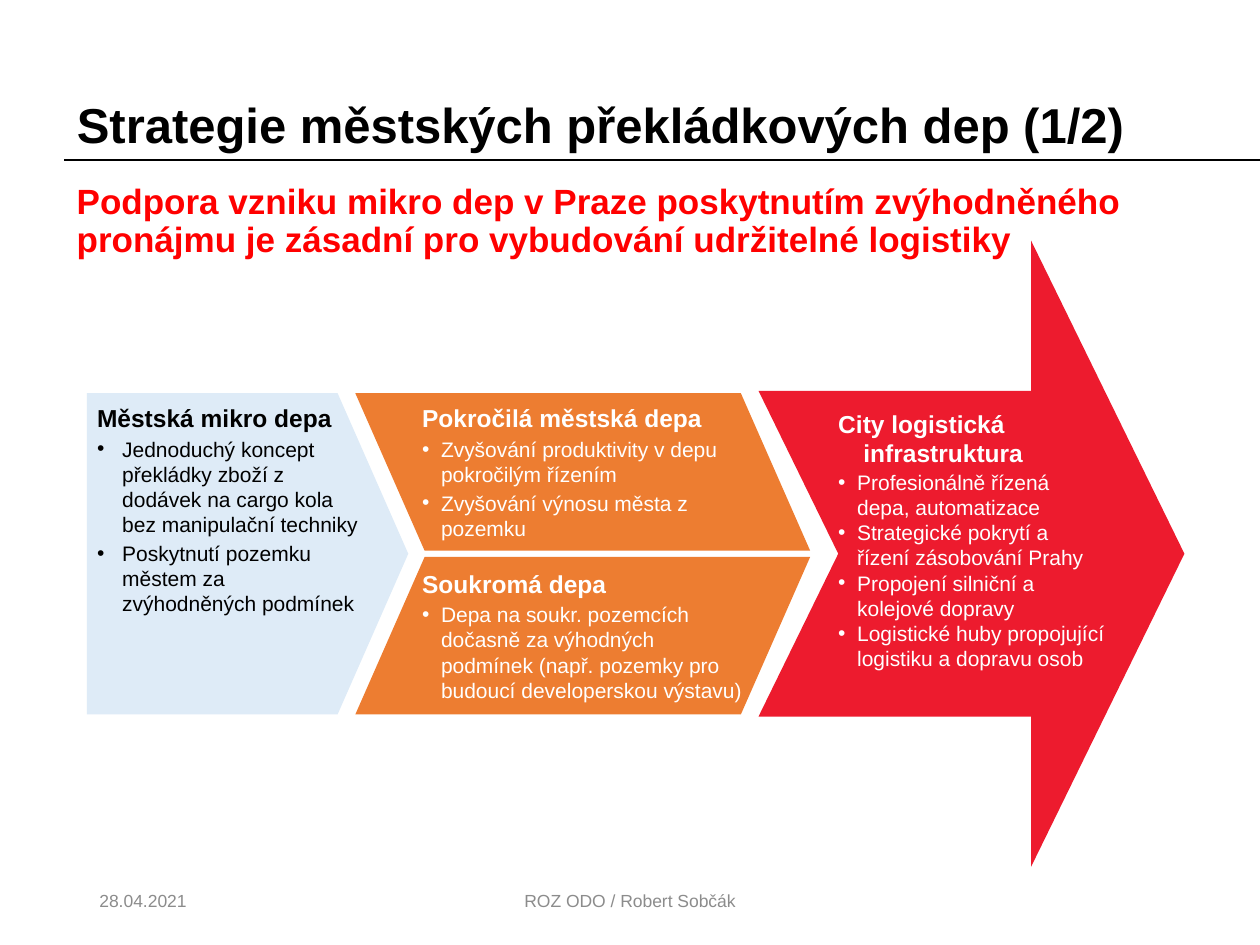
from lxml import etree
from pptx import Presentation
from pptx.dml.color import RGBColor
from pptx.enum.shapes import MSO_CONNECTOR, MSO_SHAPE
from pptx.enum.text import MSO_ANCHOR, MSO_AUTO_SIZE, PP_ALIGN
from pptx.oxml.ns import qn
from pptx.util import Inches, Pt

LEFT, CENTER = PP_ALIGN.LEFT, PP_ALIGN.CENTER
TOP, MIDDLE, BOTTOM = MSO_ANCHOR.TOP, MSO_ANCHOR.MIDDLE, MSO_ANCHOR.BOTTOM
PENTAGON, SLANT = MSO_SHAPE.PENTAGON, MSO_SHAPE.PARALLELOGRAM
NOTCHED_ARROW = MSO_SHAPE.NOTCHED_RIGHT_ARROW
STRAIGHT = MSO_CONNECTOR.STRAIGHT
NO_AUTOFIT = MSO_AUTO_SIZE.NONE

COLORS = {
    "black": "000000",
    "white": "FFFFFF",
    "gray": "8C8C8C",
    "claim": "FF0000",
    "micro": "DEEBF7",
    "depot": "ED7D31",
    "city": "ED1B2E",
}


class SlideBuilder:
    font = "Arial"

    def __init__(self, deck):
        self.page = deck.slides.add_slide(deck.slide_layouts[5])

    def color(self, name):
        return RGBColor.from_string(COLORS[name])

    def add_span(self, para, text, size, color, bold=False, align=LEFT):
        para.alignment = align
        span = para.add_run()
        span.text = text
        span.font.name = self.font
        span.font.size = Pt(size)
        span.font.bold = bold
        span.font.color.rgb = self.color(color)

    def indent(self, para, width, bullet_color=None):
        props = para._p.get_or_add_pPr()
        props.set("marL", str(Inches(width)))
        props.set("indent", str(-Inches(width)))
        if bullet_color:
            tint = etree.SubElement(props, qn("a:buClr"))
            etree.SubElement(tint, qn("a:srgbClr"), val=COLORS[bullet_color])
            etree.SubElement(props, qn("a:buFont"), typeface=self.font)
            etree.SubElement(props, qn("a:buChar"), char="•")

    def title(self, text, left, top, width, height):
        box = self.page.shapes.title
        box.left, box.top = Inches(left), Inches(top)
        box.width, box.height = Inches(width), Inches(height)
        frame = box.text_frame
        frame.auto_size = NO_AUTOFIT
        frame.vertical_anchor = BOTTOM
        frame.paragraphs[0].line_spacing = 0.9
        self.add_span(frame.paragraphs[0], text, 28, "black", bold=True)

    def rule(self, left, right, top):
        line = self.page.shapes.add_connector(
            STRAIGHT, Inches(left), Inches(top), Inches(right), Inches(top))
        line.line.color.rgb = self.color("black")
        line.line.width = Pt(1)
        etree.SubElement(line._element.spPr, qn("a:effectLst"))

    def text(self, text, left, top, width, height, size, color,
             bold=False, align=LEFT, anchor=MIDDLE, spacing=None):
        box = self.page.shapes.add_textbox(
            Inches(left), Inches(top), Inches(width), Inches(height))
        frame = box.text_frame
        frame.word_wrap = True
        frame.vertical_anchor = anchor
        frame.paragraphs[0].line_spacing = spacing
        self.add_span(frame.paragraphs[0], text, size, color, bold, align)

    def stage(self, kind, left, top, width, height, adjustments, fill, color,
              heading, points, inset=0, bottom_inset=None, anchor=MIDDLE,
              indent=0.15, gap=1, flip=False):
        box = self.page.shapes.add_shape(
            kind, Inches(left), Inches(top), Inches(width), Inches(height))
        for index, value in enumerate(adjustments):
            box.adjustments[index] = value
        box.shadow.inherit = False
        box.fill.solid()
        box.fill.fore_color.rgb = self.color(fill)
        box.line.fill.background()
        if flip:
            box._element.spPr.xfrm.set("flipH", "1")
        frame = box.text_frame
        frame.word_wrap = True
        frame.vertical_anchor = anchor
        frame.margin_left = frame.margin_right = frame.margin_top = Inches(inset)
        frame.margin_bottom = Inches(inset if bottom_inset is None else bottom_inset)
        para = frame.paragraphs[0]
        self.indent(para, 0.2)
        para.space_after = Pt(1)
        self.add_span(para, heading, 14, color, bold=True)
        for point in points:
            para = frame.add_paragraph()
            self.indent(para, indent, color)
            para.space_before = para.space_after = Pt(gap)
            self.add_span(para, point, 12, color)


def main():
    deck = Presentation()
    deck.slide_width, deck.slide_height = Inches(10), Inches(7.5)
    slide = SlideBuilder(deck)

    slide.rule(0.51, 10, 1.27)
    slide.title("Strategie městských překládkových dep (1/2)", 0.51, 0, 8.97, 1.27)
    slide.text("28.04.2021", 0.69, 6.95, 2.25, 0.4, 10, "gray")
    slide.text("ROZ ODO / Robert Sobčák", 3.31, 6.95, 3.38, 0.4, 10, "gray", align=CENTER)
    slide.text("Podpora vzniku mikro dep v Praze poskytnutím zvýhodněného "
               "pronájmu je zásadní pro vybudování udržitelné logistiky",
               0.51, 1.4, 8.98, 0.71, 20, "claim", bold=True, anchor=BOTTOM, spacing=0.9)

    slide.stage(PENTAGON, 0.69, 3.12, 2.55, 2.55, [0.22], "micro", "black",
                "Městská mikro depa",
                ["Jednoduchý koncept překládky zboží z dodávek na cargo kola "
                 "bez manipulační techniky",
                 "Poskytnutí pozemku městem za zvýhodněných podmínek"],
                inset=0.08, anchor=TOP, indent=0.2)

    depots = [
        ("Pokročilá městská depa",
         ["Zvyšování produktivity v depu pokročilým řízením",
          "Zvyšování výnosu města z pozemku"]),
        ("Soukromá depa",
         ["Depa na soukr. pozemcích dočasně za výhodných podmínek "
          "(např. pozemky pro budoucí developerskou výstavu)"]),
    ]
    for row, (heading, points) in enumerate(depots):
        slide.stage(SLANT, 2.82, 3.12 + row * 1.3, 3.61, 1.25, [0.44],
                    "depot", "white", heading, points, flip=row == 0)

    slide.stage(NOTCHED_ARROW, 6.02, 1.91, 3.38, 4.97, [0.52, 0.36], "city", "white",
                "City logistická infrastruktura",
                ["Profesionálně řízená depa, automatizace",
                 "Strategické pokrytí a řízení zásobování Prahy",
                 "Propojení silniční a kolejové dopravy",
                 "Logistické huby propojující logistiku a dopravu osob"],
                bottom_inset=0.22, gap=0)

    deck.save("out.pptx")


if __name__ == "__main__":
    main()
